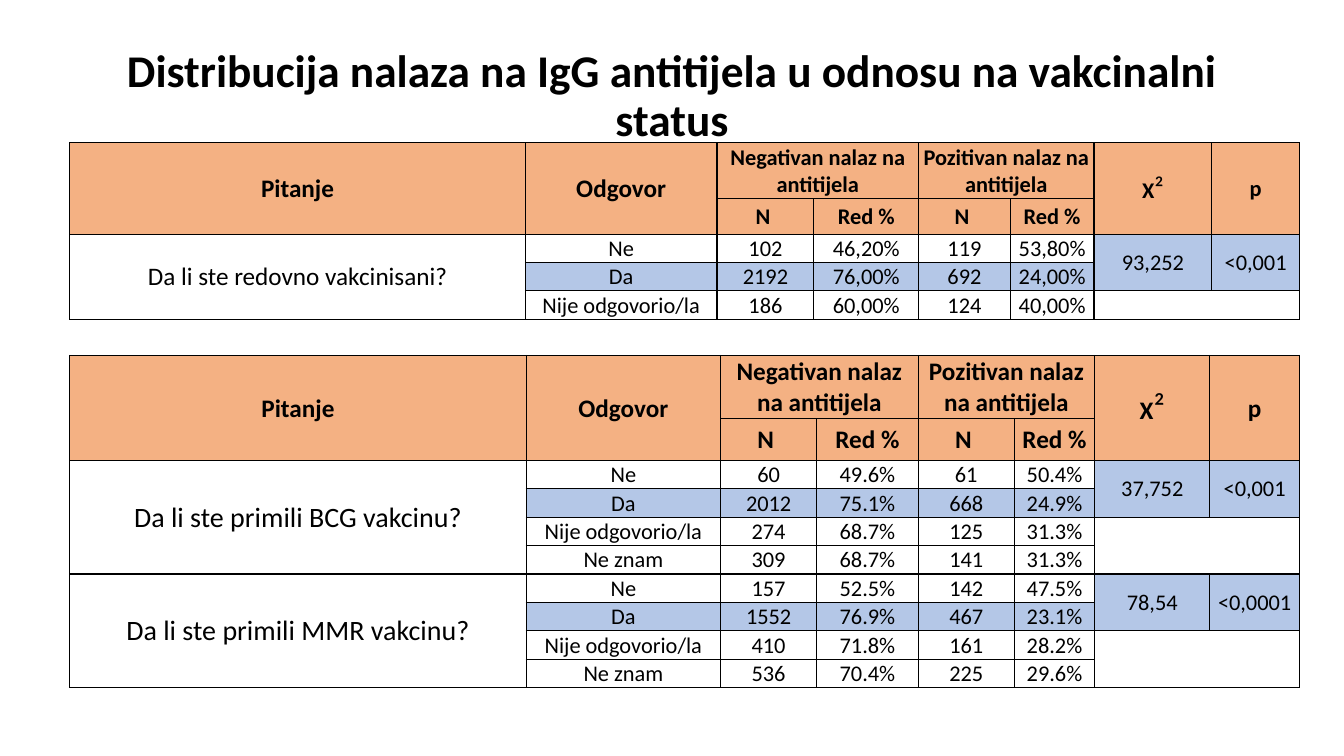
"""Build a slide with two tables of IgG antibody findings by vaccination status."""
from lxml import etree
from pptx import Presentation
from pptx.dml.color import RGBColor
from pptx.enum.text import MSO_ANCHOR, MSO_AUTO_SIZE, PP_ALIGN
from pptx.oxml.ns import qn
from pptx.util import Cm, Pt

BLACK = RGBColor(0, 0, 0)
ORANGE = RGBColor(0xF4, 0xB1, 0x83)
BLUE = RGBColor(0xB4, 0xC7, 0xE7)
MIDDLE = MSO_ANCHOR.MIDDLE
CENTER = PP_ALIGN.CENTER
NO_FIT = MSO_AUTO_SIZE.NONE
FONT = "Calibri"
LEFT = 1.76
ROW = 0.715

REGULAR = [
    ("Da li ste redovno vakcinisani?", "93,252", "<0,001", [
        ("Ne", "102", "46,20%", "119", "53,80%"),
        ("Da", "2192", "76,00%", "692", "24,00%"),
        ("Nije odgovorio/la", "186", "60,00%", "124", "40,00%")]),
]
VACCINES = [
    ("Da li ste primili BCG vakcinu?", "37,752", "<0,001", [
        ("Ne", "60", "49.6%", "61", "50.4%"),
        ("Da", "2012", "75.1%", "668", "24.9%"),
        ("Nije odgovorio/la", "274", "68.7%", "125", "31.3%"),
        ("Ne znam", "309", "68.7%", "141", "31.3%")]),
    ("Da li ste primili MMR vakcinu?", "78,54", "<0,0001", [
        ("Ne", "157", "52.5%", "142", "47.5%"),
        ("Da", "1552", "76.9%", "467", "23.1%"),
        ("Nije odgovorio/la", "410", "71.8%", "161", "28.2%"),
        ("Ne znam", "536", "70.4%", "225", "29.6%")]),
]


def write(frame, text, size=16, bold=False):
    para = frame.paragraphs[0]
    para.alignment = CENTER
    run = para.add_run()
    run.text = text
    font = run.font
    font.name, font.size, font.bold = FONT, Pt(size), bold
    font.color.rgb = BLACK


def border(cell):
    props = cell._tc.get_or_add_tcPr()
    for place, side in enumerate(("lnL", "lnR", "lnT", "lnB")):
        line = etree.Element(qn("a:" + side), w=str(Pt(1)))
        fill = etree.SubElement(line, qn("a:solidFill"))
        etree.SubElement(fill, qn("a:srgbClr"), val=str(BLACK))
        props.insert(place, line)


def paint(cell, color):
    cell.fill.solid()
    cell.fill.fore_color.rgb = color


def grid(slide, top, widths, heights):
    frame = slide.shapes.add_table(
        len(heights), len(widths), Cm(LEFT), Cm(top),
        Cm(sum(widths)), Cm(sum(heights)))
    table = frame.table
    table.first_row = table.horz_banding = False
    for col, width in zip(table.columns, widths):
        col.width = Cm(width)
    for row, height in zip(table.rows, heights):
        row.height = Cm(height)
    for cell in table.iter_cells():
        cell.margin_left = cell.margin_right = cell.margin_top = Cm(0.02)
        cell.margin_bottom = 0
        cell.vertical_anchor = MIDDLE
        cell.fill.background()
        end = cell.text_frame.paragraphs[0]._p.get_or_add_endParaRPr()
        end.set("sz", "1000")
        border(cell)
    return table


def block(table, row, col, rows=1, cols=1):
    cell = table.cell(row, col)
    cell.merge(table.cell(row + rows - 1, col + cols - 1))
    return cell


def header(table, size, power):
    for row in range(2):
        for col in range(8):
            paint(table.cell(row, col), ORANGE)
    for col, text in enumerate(("Pitanje", "Odgovor")):
        write(block(table, 0, col, rows=2).text_frame, text, 18, True)
    for col, kind in ((2, "Negativan"), (4, "Pozitivan")):
        label = kind + " nalaz na antitijela"
        write(block(table, 0, col, cols=2).text_frame, label, size, True)
        for step, text in enumerate(("N ", "Red %")):
            write(table.cell(1, col + step).text_frame, text, size, True)
    chi = block(table, 0, 6, rows=2).text_frame
    write(chi, "X", size, True)
    write(chi, "²", power)
    write(block(table, 0, 7, rows=2).text_frame, "p", size, True)


def group(table, top, item, size):
    ask, chi, prob, lines = item
    count = len(lines)
    write(block(table, top, 0, rows=count).text_frame, ask, size)
    for row, line in enumerate(lines, top):
        for col, text in enumerate(line, 1):
            cell = table.cell(row, col)
            write(cell.text_frame, text)
            if line[0] == "Da":
                paint(cell, BLUE)
    for col, text in ((6, chi), (7, prob)):
        for row in (top, top + 1):
            paint(table.cell(row, col), BLUE)
        write(block(table, top, col, rows=2).text_frame, text)
    block(table, top + 2, 6, rows=count - 2, cols=2)


def results(slide, top, widths, heads, items, sizes):
    head, power, ask = sizes
    total = sum(len(item[3]) for item in items)
    table = grid(slide, top, widths, heads + [ROW] * total)
    header(table, head, power)
    row = 2
    for item in items:
        group(table, row, item, ask)
        row += len(item[3])


def heading(slide, text):
    title = slide.shapes.title
    title.left, title.top = Cm(2.33), Cm(1.01)
    title.width, title.height = Cm(29.21), Cm(2.9)
    frame = title.text_frame
    frame.word_wrap = True
    frame.auto_size = NO_FIT
    frame.vertical_anchor = MIDDLE
    frame.paragraphs[0].line_spacing = 0.9
    write(frame, text, 32.4, True)


def main():
    deck = Presentation()
    deck.slide_width, deck.slide_height = Cm(33.87), Cm(19.05)
    slide = deck.slides.add_slide(deck.slide_layouts[5])
    heading(slide, "Distribucija nalaza na IgG antitijela "
                   "u odnosu na vakcinalni status")
    results(slide, 3.6, [11.48, 4.83, 2.44, 2.64, 2.31, 2.11, 2.97, 2.21],
            [1.41, 0.89], REGULAR, (16, 20, 18))
    results(slide, 8.96, [11.5, 4.9, 2.42, 2.56, 2.42, 2.03, 2.9, 2.26],
            [1.59, 1.05], VACCINES, (18, 24, 20))
    deck.save("out.pptx")


if __name__ == "__main__":
    main()
